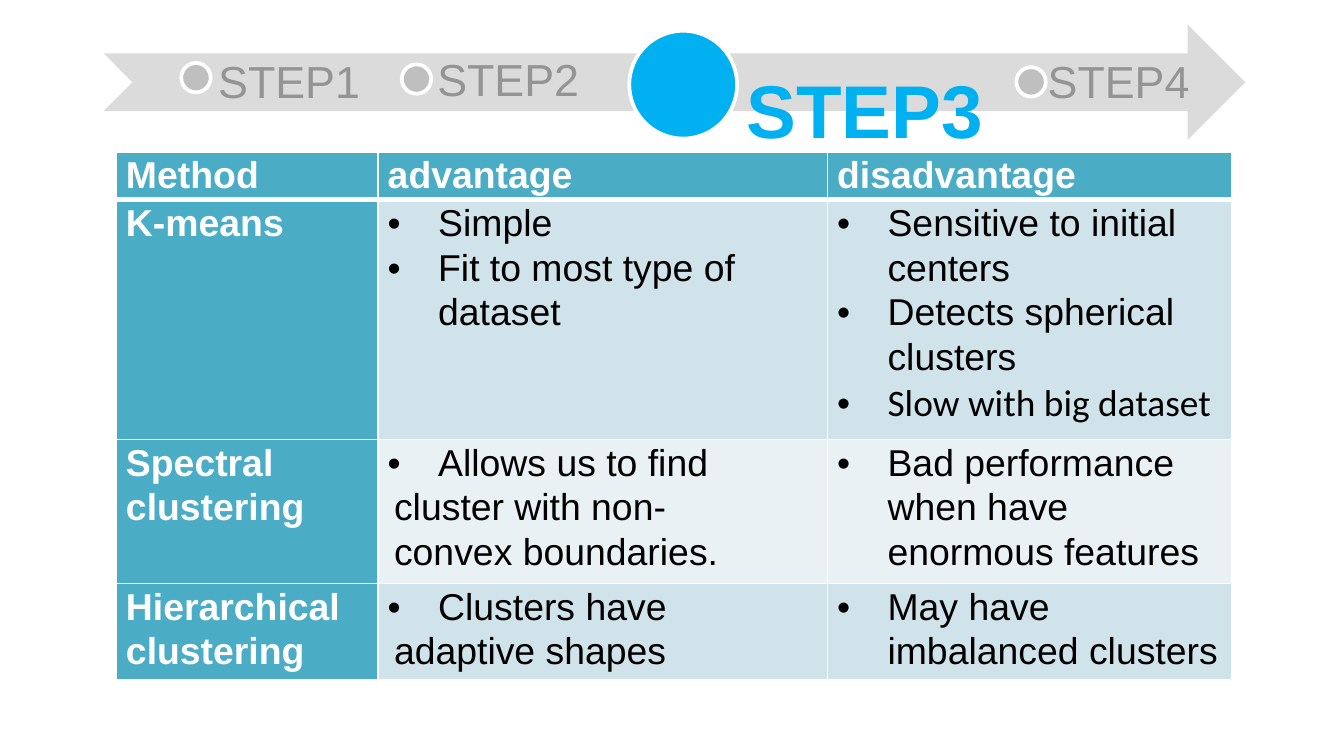
import lxml.etree
import pptx
import pptx.dml.color
import pptx.enum.shapes
import pptx.enum.text
import pptx.oxml.ns
import pptx.util

RGB = pptx.dml.color.RGBColor
SHAPE = pptx.enum.shapes.MSO_SHAPE
ANCHOR = pptx.enum.text.MSO_ANCHOR
ALIGN = pptx.enum.text.PP_ALIGN

WHITE = RGB(0xFF, 0xFF, 0xFF)
BLACK = RGB(0, 0, 0)
TRACK = RGB(0xDB, 0xDB, 0xDB)
DOT = RGB(0xBF, 0xBF, 0xBF)
MUTED = RGB(0x94, 0x94, 0x94)
BRIGHT = RGB(0, 0xB0, 0xF0)
TEAL = RGB(0x4B, 0xAC, 0xC6)
BANDS = [RGB(0xE9, 0xF1, 0xF5), RGB(0xD0, 0xE3, 0xEA)]


def px(num):
    return pptx.util.Inches(num / 192)


def add(node, tag, **attrs):
    return lxml.etree.SubElement(node, pptx.oxml.ns.qn(tag), **attrs)


class Deck:
    font = "Arial"

    def __init__(self, wide, high):
        self.file = pptx.Presentation()
        self.file.slide_width = px(wide)
        self.file.slide_height = px(high)
        self.slide = self.file.slides.add_slide(self.file.slide_layouts[6])
        self.group = self.slide.shapes.add_group_shape()

    def style(self, para, size, color, bold=False, face=None):
        font = para.font
        font.name = face or self.font
        font.size = pptx.util.Pt(size)
        font.bold = bold
        font.color.rgb = color

    def shape(self, kind, box, fill, edge=None):
        item = self.group.shapes.add_shape(kind, *map(px, box))
        item.shadow.inherit = False
        item.fill.solid()
        item.fill.fore_color.rgb = fill
        if edge is None:
            item.line.fill.background()
        else:
            item.line.color.rgb = edge
            item.line.width = pptx.util.Pt(2)

    def label(self, text, box, inset, anchor, size, color, bold=False):
        frame = self.group.shapes.add_textbox(*map(px, box)).text_frame
        frame.word_wrap = True
        frame.vertical_anchor = anchor
        frame.margin_left = frame.margin_right = px(inset)
        frame.margin_top = frame.margin_bottom = px(inset)
        para = frame.paragraphs[0]
        para.text = text
        para.alignment = ALIGN.CENTER
        para.line_spacing = 0.9
        self.style(para, size, color, bold)

    def cell(self, cell, lines, fill, head, base):
        cell.margin_left = cell.margin_right = px(14)
        cell.margin_top = cell.margin_bottom = 0
        props = cell._tc.get_or_add_tcPr()
        for side in "LRTB":
            width = base if side == "B" else 1
            line = add(props, f"a:ln{side}", w=str(pptx.util.Pt(width)))
            add(add(line, "a:solidFill"), "a:srgbClr", val=str(WHITE))
        cell.fill.solid()
        cell.fill.fore_color.rgb = fill
        frame = cell.text_frame
        for num, text in enumerate(lines):
            para = frame.add_paragraph() if num else frame.paragraphs[0]
            para.text = text.removeprefix("•")
            para.line_spacing = 1.07
            form = para._p.get_or_add_pPr()
            if text.startswith("•"):
                form.set("marL", str(px(72)))
                form.set("indent", str(px(-72)))
                add(form, "a:buFont", typeface=self.font)
                add(form, "a:buChar", char="•")
            elif not head:
                form.set("marL", str(px(9)))
            face = "Calibri" if text.startswith("•Slow") else None
            self.style(para, 20, WHITE if head else BLACK, head, face)

    def table(self, box, cols, rows, data):
        item = self.slide.shapes.add_table(len(rows), len(cols), *map(px, box))
        table = item.table
        table.first_col = True
        for col, wide in zip(table.columns, cols):
            col.width = px(wide)
        for num, (row, high) in enumerate(zip(table.rows, rows)):
            row.height = px(high)
            for pos, cell in enumerate(row.cells):
                head = num == 0 or pos == 0
                fill = TEAL if head else BANDS[num % 2]
                self.cell(cell, data[num][pos], fill, head, 1 if num else 3)
        item.height = px(box[3])


STEPS = [
    ("STEP1", (271, 51), ANCHOR.TOP, (259, 90)),
    ("STEP2", (584, 21), ANCHOR.BOTTOM, (574, 92)),
    ("STEP4", (1456, 51), ANCHOR.TOP, (1452, 96)),
]

DATA = [
    [["Method"], ["advantage"], ["disadvantage"]],
    [
        ["K-means"],
        ["•Simple", "•Fit to most type of dataset"],
        [
            "•Sensitive to initial centers",
            "•Detects spherical clusters",
            "•Slow with big dataset",
        ],
    ],
    [
        ["Spectral clustering"],
        ["•Allows us to find", "cluster with non-", "convex boundaries."],
        ["•Bad performance when have enormous features"],
    ],
    [
        ["Hierarchical clustering"],
        ["•Clusters have", "adaptive shapes"],
        ["•May have imbalanced clusters"],
    ],
]


def main():
    deck = Deck(1920, 1080)
    deck.shape(SHAPE.NOTCHED_RIGHT_ARROW, (148, 35, 1631, 165), TRACK)
    deck.label("STEP3", (949, 156, 572, 123), 60, ANCHOR.BOTTOM, 40, BRIGHT, True)
    deck.shape(SHAPE.OVAL, (899, 44, 154, 154), BRIGHT, WHITE)
    for text, spot, anchor, dot in STEPS:
        deck.label(text, (*spot, 284, 165), 36, anchor, 24, MUTED)
        deck.shape(SHAPE.OVAL, (*dot, 42, 42), DOT, WHITE)
    deck.table((166, 217, 1594, 753), [374, 642, 578], [60, 309, 184, 123], DATA)
    deck.file.save("out.pptx")


if __name__ == "__main__":
    main()
